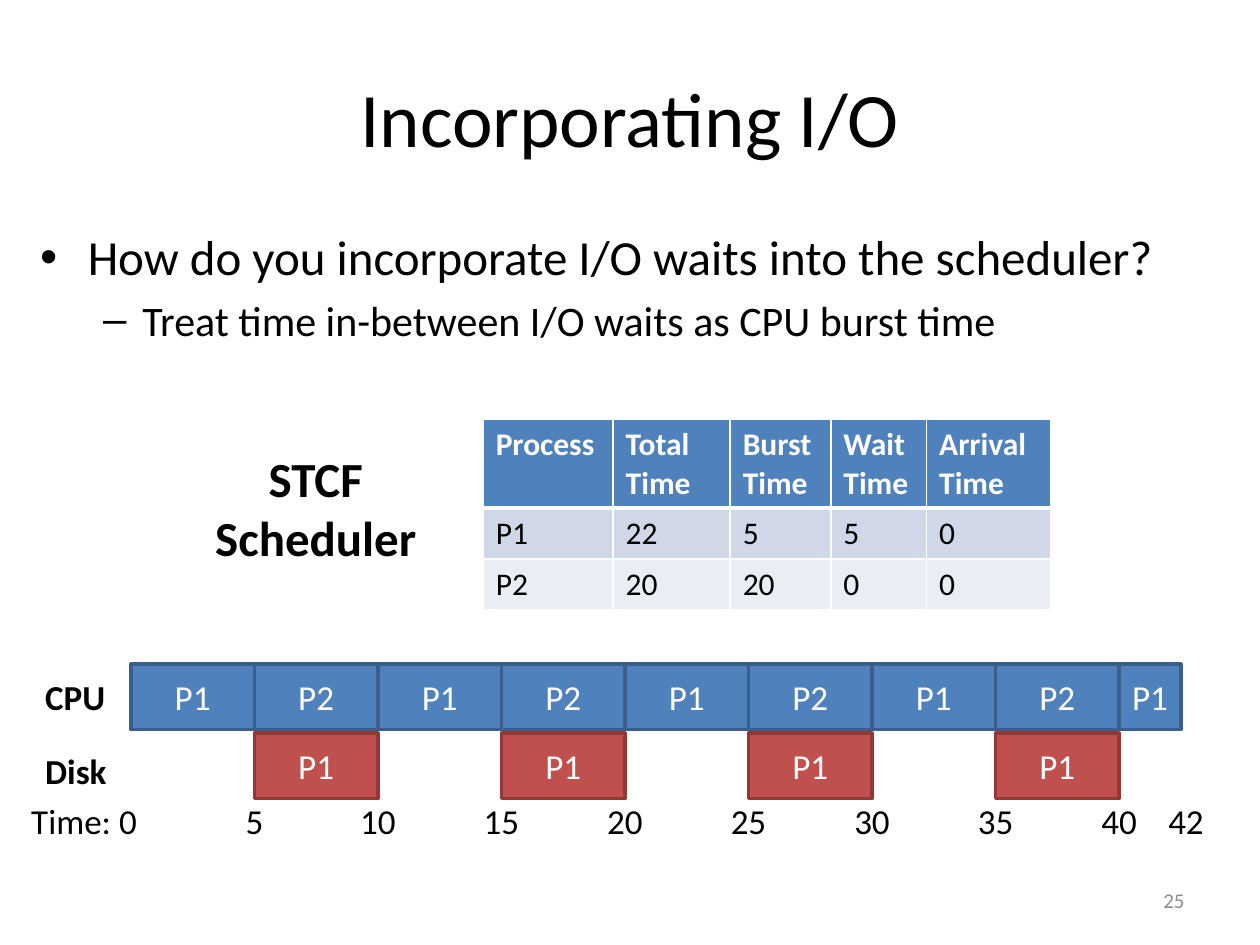
from dataclasses import dataclass

from lxml.etree import SubElement
from pptx import Presentation
from pptx.dml.color import RGBColor
from pptx.enum.shapes import MSO_SHAPE
from pptx.enum.text import MSO_ANCHOR, MSO_AUTO_SIZE, PP_ALIGN
from pptx.oxml.ns import qn
from pptx.util import Cm, Pt


@dataclass(frozen=True)
class Theme:
    font: str = "Calibri"
    black: str = "000000"
    white: str = "FFFFFF"
    gray: str = "8C8C8C"
    cpu_fill: str = "4F81BD"
    cpu_line: str = "3A5F8C"
    disk_fill: str = "C0504D"
    disk_line: str = "953735"
    band_dark: str = "D0D8E8"
    band_light: str = "E9EDF4"
    title: int = 44
    heading: int = 28
    subpoint: int = 24
    label: int = 20
    cell: int = 18
    footer: int = 12


THEME = Theme()

# Timeline geometry in centimetres: one slot is a burst of five time units
TIMELINE_LEFT = 2.64
SLOT_WIDTH = 2.49
SLOT_TIME = 5
END_TIME = 42
BLOCK_HEIGHT = 1.32
CPU_TOP = 13.39
DISK_TOP = 14.78
TICK_TOP = 16.0
LABEL_HEIGHT = 1.11


def time_to_x(time):
    return TIMELINE_LEFT + SLOT_WIDTH * time / SLOT_TIME


def add_run(paragraph, text, size, color=THEME.black, bold=False):
    run = paragraph.add_run()
    run.text = text
    run.font.name = THEME.font
    run.font.size = Pt(size)
    run.font.bold = bold
    run.font.color.rgb = RGBColor.from_string(color)


def add_text(slide, text, box, size, color=THEME.black, bold=False,
             align=PP_ALIGN.LEFT, wrap=False, anchor=MSO_ANCHOR.TOP):
    shape = slide.shapes.add_textbox(*map(Cm, box))
    frame = shape.text_frame
    frame.word_wrap = wrap
    frame.auto_size = MSO_AUTO_SIZE.SHAPE_TO_FIT_TEXT
    frame.vertical_anchor = anchor
    paragraph = frame.paragraphs[0]
    paragraph.alignment = align
    add_run(paragraph, text, size, color, bold)


def add_title(slide, text):
    title = slide.shapes.title
    title.left, title.top, title.width, title.height = map(Cm, (1.27, 0.76, 22.86, 3.18))
    title.text_frame.vertical_anchor = MSO_ANCHOR.MIDDLE
    paragraph = title.text_frame.paragraphs[0]
    paragraph.alignment = PP_ALIGN.CENTER
    add_run(paragraph, text, THEME.title)


def format_bullet(paragraph, character, margin, hanging):
    properties = paragraph._p.get_or_add_pPr()
    properties.set("marL", str(Cm(margin)))
    properties.set("indent", str(-Cm(hanging)))
    SubElement(properties, qn("a:buFont"), typeface="Arial")
    SubElement(properties, qn("a:buChar"), char=character)


def add_bullets(slide):
    points = [
        ("How do you incorporate I/O waits into the scheduler?", THEME.heading, "•", 0.96, 0.96),
        ("Treat time in-between I/O waits as CPU burst time", THEME.subpoint, "–", 2.06, 0.79),
    ]
    frame = slide.shapes.add_textbox(Cm(0.56), Cm(4.45), Cm(24.46), Cm(3.38)).text_frame
    frame.word_wrap = True
    for level, (text, size, character, margin, hanging) in enumerate(points):
        paragraph = frame.add_paragraph() if level else frame.paragraphs[0]
        paragraph.level = level
        paragraph.space_before = Pt(size * 0.2)
        format_bullet(paragraph, character, margin, hanging)
        add_run(paragraph, text, size)


def set_borders(cell, bottom):
    properties = cell._tc.get_or_add_tcPr()
    widths = {"a:lnL": 1, "a:lnR": 1, "a:lnT": 1, "a:lnB": bottom}
    # Border lines come before the cell fill
    for index, (tag, width) in enumerate(widths.items()):
        line = SubElement(properties, qn(tag), w=str(Pt(width)))
        fill = SubElement(line, qn("a:solidFill"))
        SubElement(fill, qn("a:srgbClr"), val=THEME.white)
        properties.insert(index, line)


def add_process_table(slide):
    rows = [
        ("Process", "Total Time", "Burst Time", "Wait Time", "Arrival Time"),
        ("P1", "22", "5", "5", "0"),
        ("P2", "20", "20", "0", "0"),
    ]
    column_widths = (2.62, 2.36, 2.03, 1.93, 2.51)
    row_heights = (1.77, 1.03, 1.03)
    fills = (THEME.cpu_fill, THEME.band_dark, THEME.band_light)
    table = slide.shapes.add_table(
        len(rows), len(column_widths), Cm(9.74), Cm(8.46),
        Cm(sum(column_widths)), Cm(sum(row_heights))).table
    for column, width in zip(table.columns, column_widths):
        column.width = Cm(width)
    for row_index, values in enumerate(rows):
        table.rows[row_index].height = Cm(row_heights[row_index])
        header = row_index == 0
        for column_index, value in enumerate(values):
            cell = table.cell(row_index, column_index)
            cell.fill.solid()
            cell.fill.fore_color.rgb = RGBColor.from_string(fills[row_index])
            set_borders(cell, bottom=3 if header else 1)
            add_run(cell.text_frame.paragraphs[0], value, THEME.cell,
                    THEME.white if header else THEME.black, header)


def add_block(slide, process, start, end, top, fill, line):
    left = time_to_x(start)
    shape = slide.shapes.add_shape(
        MSO_SHAPE.RECTANGLE, Cm(left), Cm(top), Cm(time_to_x(end) - left), Cm(BLOCK_HEIGHT))
    shape.shadow.inherit = False
    shape.fill.solid()
    shape.fill.fore_color.rgb = RGBColor.from_string(fill)
    shape.line.color.rgb = RGBColor.from_string(line)
    shape.line.width = Pt(2)
    shape.text_frame.vertical_anchor = MSO_ANCHOR.MIDDLE
    paragraph = shape.text_frame.paragraphs[0]
    paragraph.alignment = PP_ALIGN.CENTER
    add_run(paragraph, process, THEME.label, THEME.white)


def add_timeline(slide):
    # CPU alternates between the processes; P1 waits on disk while P2 runs
    last_start = END_TIME - END_TIME % SLOT_TIME
    for slot, start in enumerate(range(0, last_start, SLOT_TIME)):
        end = start + SLOT_TIME
        process = ("P1", "P2")[slot % 2]
        add_block(slide, process, start, end, CPU_TOP, THEME.cpu_fill, THEME.cpu_line)
        if process == "P2":
            add_block(slide, "P1", start, end, DISK_TOP, THEME.disk_fill, THEME.disk_line)
    # The final burst is drawn half a slot wide to fit its name
    add_block(slide, "P1", last_start, last_start + SLOT_TIME / 2, CPU_TOP,
              THEME.cpu_fill, THEME.cpu_line)

    # Row names
    for name, top in (("CPU", 13.49), ("Disk", 14.99)):
        add_text(slide, name, (0.66, top, 1.75, LABEL_HEIGHT), THEME.label, bold=True)

    # Time marks, centred on the block edges
    add_text(slide, "Time: 0", (0.38, TICK_TOP, 2.67, LABEL_HEIGHT), THEME.label)
    ticks = [(str(time), time_to_x(time))
             for time in range(SLOT_TIME, last_start + 1, SLOT_TIME)]
    ticks.append((str(END_TIME), 23.91))
    for text, center in ticks:
        width = 0.86 if len(text) == 1 else 1.24
        add_text(slide, text, (center - width / 2, TICK_TOP, width, LABEL_HEIGHT),
                 THEME.label, align=PP_ALIGN.CENTER)


def main():
    presentation = Presentation()
    presentation.slide_width, presentation.slide_height = Cm(25.4), Cm(19.05)
    slide = presentation.slides.add_slide(presentation.slide_layouts[5])

    # Heading and points
    add_title(slide, "Incorporating I/O")
    add_bullets(slide)

    # Scheduler name and its processes
    add_text(slide, "STCF Scheduler", (3.99, 8.92, 4.75, 2.64), THEME.heading,
             bold=True, align=PP_ALIGN.CENTER, wrap=True)
    add_process_table(slide)

    add_timeline(slide)

    # Slide number
    add_text(slide, "25", (18.21, 17.65, 5.92, 1.01), THEME.footer, THEME.gray,
             align=PP_ALIGN.RIGHT, wrap=True, anchor=MSO_ANCHOR.MIDDLE)
    presentation.save("out.pptx")


if __name__ == "__main__":
    main()
